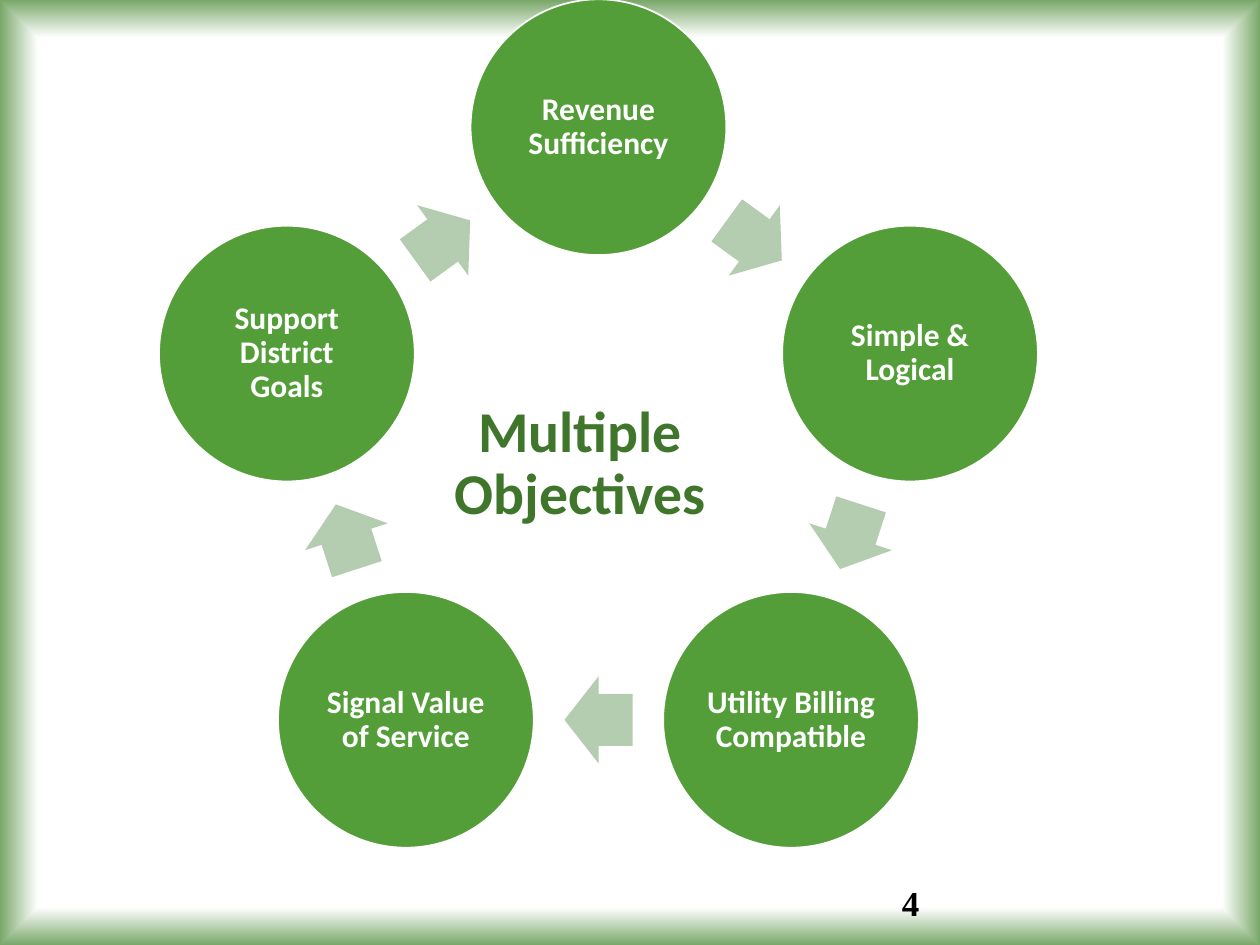
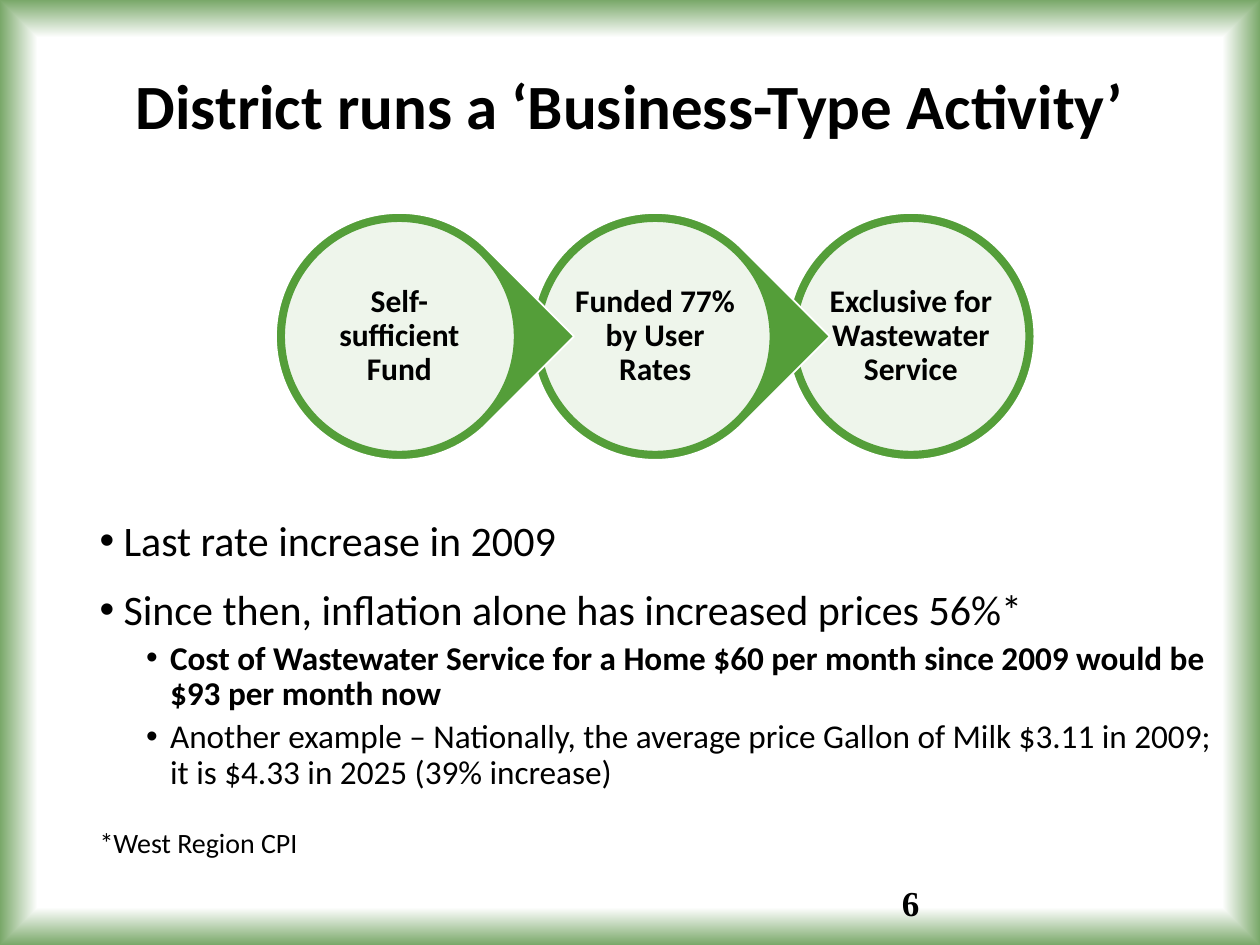
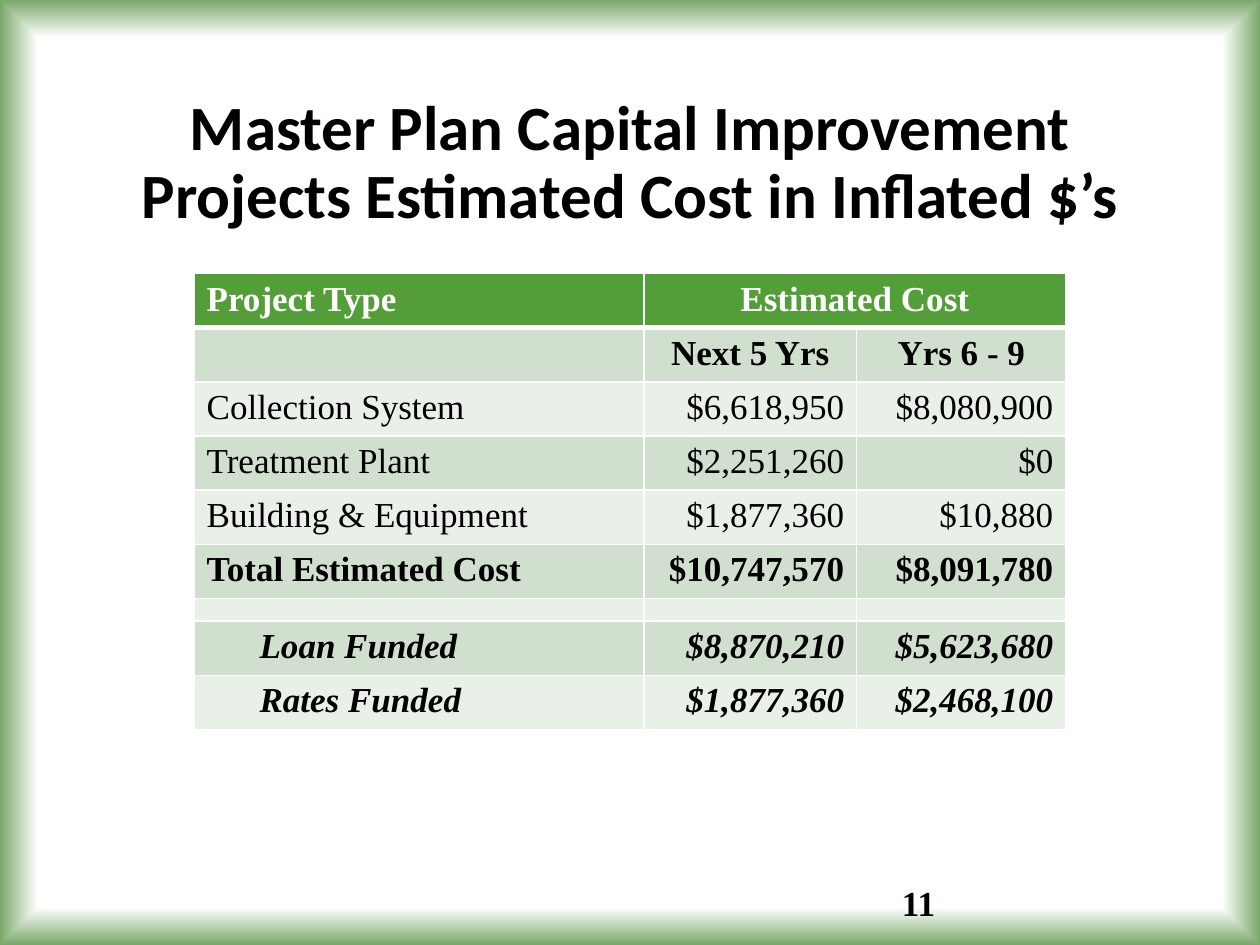
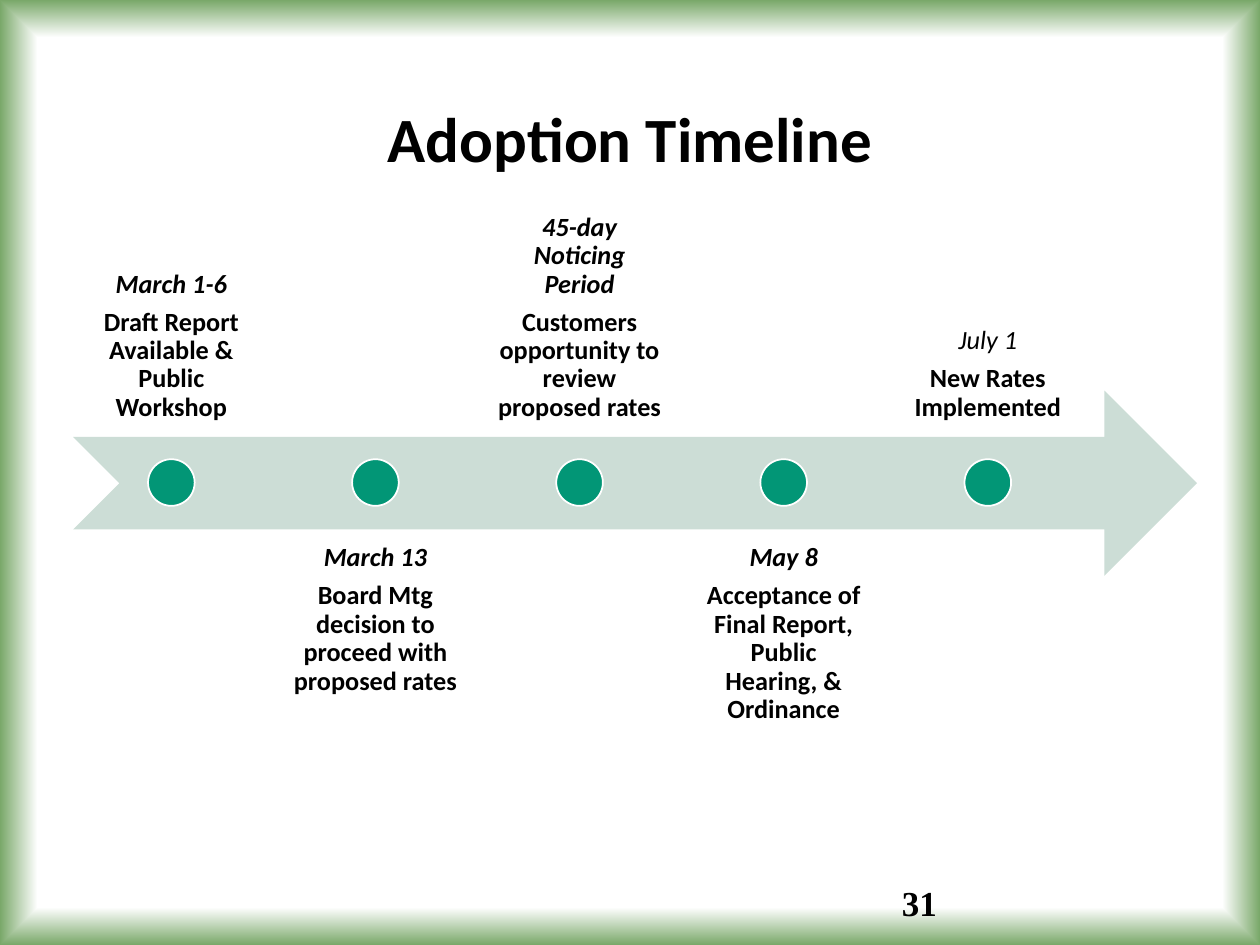
"""Build four slides on wastewater rates for a utility district."""
from dataclasses import dataclass
from math import cos, radians, sin
from typing import NamedTuple, Optional

from lxml.etree import SubElement
from pptx import Presentation
from pptx.dml.color import RGBColor
from pptx.enum.shapes import MSO_SHAPE as Preset
from pptx.enum.text import MSO_ANCHOR as Anchor, MSO_AUTO_SIZE as AutoSize, PP_ALIGN as Align
from pptx.oxml import parse_xml
from pptx.oxml.ns import nsdecls, qn
from pptx.presentation import Presentation as Deck
from pptx.shapes.autoshape import Shape
from pptx.slide import Slide
from pptx.table import _Cell as Cell
from pptx.text.text import TextFrame
from pptx.util import Inches, Pt


@dataclass(frozen=True)
class Theme:
    """Colours, fonts and type sizes of the deck."""
    green: str = "549E39"
    dark_green: str = "3F762B"
    pale_green: str = "B4CCAF"
    edge_green: str = "78A768"
    band_dark: str = "D1DFCE"
    band_light: str = "E9F0E8"
    arrow: str = "CCDDD6"
    teal: str = "029676"
    white: str = "FFFFFF"
    black: str = "000000"
    sans: str = "Calibri"
    serif: str = "Times New Roman"
    title: float = 36
    hub: float = 33
    body: float = 24
    detail: float = 19
    note: float = 16
    label: float = 18
    event: float = 15
    table: float = 20
    spacer: float = 8


THEME = Theme()
TITLE_ONLY, TITLE_AND_BODY = 5, 1


class Area(NamedTuple):
    """A rectangle in inches."""
    left: float
    top: float
    width: float
    height: float


class Event(NamedTuple):
    """A milestone on the timeline."""
    date: str
    task: str
    bold_date: bool = True


class Item(NamedTuple):
    """A paragraph of the body list."""
    text: str
    size: float
    level: int = 0
    bold: bool = False
    before: float = 0
    after: float = 0
    margin: float = 0
    bullet: bool = True


class Row(NamedTuple):
    """A row of the cost table."""
    cells: tuple[str, ...]
    bold: bool = False
    italic: bool = False
    align: Align = Align.RIGHT
    margin: float = 0
    height: float = 0.43


OBJECTIVES = ("Revenue Sufficiency", "Simple & Logical", "Utility Billing Compatible",
              "Signal Value of Service", "Support District Goals")
FUND_TRAITS = ("Self-sufficient Fund", "Funded 77% by User Rates",
               "Exclusive for Wastewater Service")
RATE_ITEMS = (
    Item("Last rate increase in 2009", THEME.body, after=6, margin=0.19),
    Item("Since then, inflation alone has increased prices 56%*", THEME.body,
         before=7.5, margin=0.19),
    Item("Cost of Wastewater Service for a Home $60 per month since 2009 would be "
         "$93 per month now", THEME.detail, level=1, bold=True, before=3.8, margin=0.56),
    Item("Another example – Nationally, the average price Gallon of Milk $3.11 in 2009; "
         "it is $4.33 in 2025 (39% increase)", THEME.detail, level=1, before=3.8,
         after=18, margin=0.56),
    Item("*West Region CPI", THEME.note, level=1, before=3.8, bullet=False),
)
COST_ROWS = (
    Row(("Project Type", "Estimated Cost", ""), bold=True, align=Align.CENTER),
    Row(("", "Next 5 Yrs", "Yrs 6 - 9"), bold=True, align=Align.CENTER),
    Row(("Collection System", "$6,618,950", "$8,080,900")),
    Row(("Treatment Plant", "$2,251,260", "$0")),
    Row(("Building & Equipment", "$1,877,360", "$10,880")),
    Row(("Total Estimated Cost", "$10,747,570", "$8,091,780"), bold=True),
    Row(("", "", ""), height=0.18),
    Row(("Loan Funded", "$8,870,210", "$5,623,680"), bold=True, italic=True, margin=0.42),
    Row(("Rates Funded", "$1,877,360", "$2,468,100"), bold=True, italic=True, margin=0.42),
)
COLUMN_WIDTHS = (3.57, 1.69, 1.66)
EVENTS = (
    Event("March 1-6", "Draft Report Available & Public Workshop"),
    Event("March 13", "Board Mtg decision to proceed with proposed rates"),
    Event("45-day Noticing Period", "Customers opportunity to review proposed rates"),
    Event("May 8", "Acceptance of Final Report, Public Hearing, & Ordinance"),
    Event("July 1", "New Rates Implemented", bold_date=False),
)


def rgb(color: str) -> RGBColor:
    """Turn a hex string into a colour."""
    return RGBColor.from_string(color)


def write(frame: TextFrame, text: str, *, size: float, font: str = THEME.sans,
          color: str = THEME.black, bold: bool = False, italic: bool = False,
          align: Align = Align.LEFT, spacing: float = 0.9, before: float = 0,
          after: float = 0, level: int = 0, margin: float = 0, hanging: float = 0,
          bullet: bool = False) -> None:
    """Write one formatted paragraph into a text frame."""
    para = frame.paragraphs[0]
    if para.runs:
        para = frame.add_paragraph()
    props = para._p.get_or_add_pPr()
    props.set("marL", str(Inches(margin)))
    props.set("indent", str(-Inches(hanging)))
    if bullet:
        SubElement(props, qn("a:buFont"), typeface="Arial")
        SubElement(props, qn("a:buChar"), char="•")
    else:
        SubElement(props, qn("a:buNone"))
    para.level = level
    para.alignment = align
    para.line_spacing = spacing
    para.space_before, para.space_after = Pt(before), Pt(after)
    for index, line in enumerate(text.split("\n")):
        if index:
            para.add_line_break()
        span = para.add_run()
        span.text = line
        span.font.name, span.font.size = font, Pt(size)
        span.font.bold, span.font.italic = bold, italic
        span.font.color.rgb = rgb(color)


def set_frame(frame: TextFrame, anchor: Anchor, inset: Optional[float] = None) -> TextFrame:
    """Wrap a text frame and fix its anchor and insets."""
    frame.word_wrap = True
    frame.auto_size = AutoSize.NONE
    frame.vertical_anchor = anchor
    if inset is not None:
        frame.margin_left = frame.margin_right = Inches(inset)
        frame.margin_top = frame.margin_bottom = Inches(inset)
    return frame


def place(shape: Shape, area: Area) -> None:
    """Move and size a shape."""
    shape.left, shape.top = Inches(area.left), Inches(area.top)
    shape.width, shape.height = Inches(area.width), Inches(area.height)


def add_box(page: Slide, area: Area, anchor: Anchor = Anchor.TOP,
            inset: Optional[float] = None) -> TextFrame:
    """Add a text box and return its frame."""
    box = page.shapes.add_textbox(*(Inches(length) for length in area))
    return set_frame(box.text_frame, anchor, inset)


def add_figure(page: Slide, preset: Preset, area: Area, fill: str,
               line: Optional[str] = None, rotation: float = 0) -> Shape:
    """Add a flat filled shape."""
    shape = page.shapes.add_shape(preset, *(Inches(length) for length in area))
    shape.shadow.inherit = False
    shape.rotation = rotation
    shape.fill.solid()
    shape.fill.fore_color.rgb = rgb(fill)
    if line:
        shape.line.color.rgb = rgb(line)
        shape.line.width = Pt(1)
    else:
        shape.line.fill.background()
    return shape


def centred(x: float, y: float, width: float, height: float) -> Area:
    """Return the area centred on a point."""
    return Area(x - width / 2, y - height / 2, width, height)


def add_page(deck: Deck, number: int, title: str, area: Area, layout: int = TITLE_ONLY,
             size: float = THEME.title, color: str = THEME.black) -> Slide:
    """Add a slide with its title and page number."""
    page = deck.slides.add_slide(deck.slide_layouts[layout])
    place(page.shapes.title, area)
    write(set_frame(page.shapes.title.text_frame, Anchor.MIDDLE), title,
          size=size, color=color, bold=True, align=Align.CENTER)
    write(add_box(page, Area(7.06, 6.95, 2.25, 0.4)), str(number),
          size=THEME.table, font=THEME.serif, bold=True, spacing=1)
    return page


def set_background(deck: Deck) -> None:
    """Give the master a white ground with a soft green edge."""
    stops = ((0, THEME.white), (92, THEME.white), (100, THEME.edge_green))
    stop_xml = "".join(f'<a:gs pos="{share * 1000}"><a:srgbClr val="{color}"/></a:gs>'
                       for share, color in stops)
    content = deck.slide_master.element.find(qn("p:cSld"))
    for ground in content.findall(qn("p:bg")):
        content.remove(ground)
    content.insert(0, parse_xml(
        f'<p:bg {nsdecls("p", "a")}><p:bgPr><a:gradFill rotWithShape="1">'
        f'<a:gsLst>{stop_xml}</a:gsLst><a:path path="shape">'
        '<a:fillToRect l="50000" t="50000" r="50000" b="50000"/></a:path>'
        '</a:gradFill><a:effectLst/></p:bgPr></p:bg>'))


def build_objectives(deck: Deck) -> None:
    """Draw the ring of objectives."""
    page = add_page(deck, 4, "Multiple\nObjectives", Area(3.25, 2.97, 2.71, 1.44),
                    size=THEME.hub, color=THEME.dark_green)
    center_x, center_y, radius, diameter = 4.75, 3.61, 2.6, 2.03
    step = 360 / len(OBJECTIVES)
    arrow_radius = radius * cos(radians(step / 2))
    for index, objective in enumerate(OBJECTIVES):
        angle = radians(index * step)
        circle = add_figure(page, Preset.OVAL, centred(
            center_x + radius * sin(angle), center_y - radius * cos(angle),
            diameter, diameter), THEME.green, THEME.white)
        write(set_frame(circle.text_frame, Anchor.MIDDLE, 0.03), objective,
              size=THEME.label, color=THEME.white, bold=True, align=Align.CENTER)
        turn = (index + 0.5) * step
        arrow = add_figure(page, Preset.RIGHT_ARROW, centred(
            center_x + arrow_radius * sin(radians(turn)),
            center_y - arrow_radius * cos(radians(turn)), 0.54, 0.69),
            THEME.pale_green, rotation=turn)
        arrow.adjustments[0], arrow.adjustments[1] = 0.6, 0.5


def build_business(deck: Deck) -> None:
    """Draw the chain of fund traits and the rate history."""
    page = add_page(deck, 6, "District runs a ‘Business-Type Activity’",
                    Area(0.69, 0.4, 8.62, 0.93), TITLE_AND_BODY)
    last = len(FUND_TRAITS) - 1
    for index, trait in reversed(list(enumerate(FUND_TRAITS))):
        x, y = 3.17 + 2.03 * index, 2.67
        preset, rotation = (Preset.OVAL, 0) if index == last else (Preset.TEAR, 45)
        add_figure(page, preset, centred(x, y, 1.96, 1.96), THEME.green, THEME.white, rotation)
        disc = add_figure(page, Preset.OVAL, centred(x, y, 1.83, 1.83),
                          THEME.white, THEME.green)
        tint = disc.fill._xPr.find(qn("a:solidFill"))[0]
        SubElement(tint, qn("a:alpha"), val="90000")
        write(set_frame(disc.text_frame, Anchor.MIDDLE, 0), trait,
              size=THEME.label, bold=True, align=Align.CENTER)
    body = page.placeholders[1]
    place(body, Area(0.69, 4.08, 9.06, 2.87))
    frame = set_frame(body.text_frame, Anchor.TOP)
    for item in RATE_ITEMS:
        write(frame, item.text, size=item.size, bold=item.bold, before=item.before,
              after=item.after, level=item.level, margin=item.margin,
              hanging=0.19 if item.bullet else 0, bullet=item.bullet)


def set_cell(cell: Cell, fill: str, bottom: float) -> None:
    """Fill a cell and draw its white borders."""
    cell.fill.solid()
    cell.fill.fore_color.rgb = rgb(fill)
    widths = {"lnL": 1, "lnR": 1, "lnT": 1, "lnB": bottom}
    for index, (side, width) in enumerate(widths.items()):
        cell._tc.get_or_add_tcPr().insert(index, parse_xml(
            f'<a:{side} {nsdecls("a")} w="{Pt(width)}"><a:solidFill>'
            f'<a:srgbClr val="{THEME.white}"/></a:solidFill></a:{side}>'))


def build_costs(deck: Deck) -> None:
    """Draw the table of project costs."""
    page = add_page(deck, 11, "Master Plan Capital Improvement Projects Estimated Cost "
                    "in Inflated $’s", Area(0.69, 0.67, 8.62, 1.27))
    area = Area(1.54, 2.17, sum(COLUMN_WIDTHS), sum(row.height for row in COST_ROWS))
    table = page.shapes.add_table(len(COST_ROWS), len(COLUMN_WIDTHS),
                                  *(Inches(length) for length in area)).table
    for column, width in zip(table.columns, COLUMN_WIDTHS):
        column.width = Inches(width)
    for row_index, row in enumerate(COST_ROWS):
        table.rows[row_index].height = Inches(row.height)
        header = row_index == 0
        band = THEME.band_dark if row_index % 2 else THEME.band_light
        for column_index, text in enumerate(row.cells):
            cell = table.cell(row_index, column_index)
            set_cell(cell, THEME.green if header else band, 3 if header else 1)
            first = column_index == 0
            if text:
                write(cell.text_frame, text, size=THEME.table, font=THEME.serif,
                      color=THEME.white if header else THEME.black, bold=row.bold,
                      italic=row.italic, align=Align.LEFT if first else row.align,
                      spacing=1, margin=row.margin if first else 0)
            else:
                cell.margin_top = cell.margin_bottom = 0
                SubElement(cell.text_frame.paragraphs[0]._p, qn("a:endParaRPr"),
                           sz=str(int(THEME.spacer * 100)))
    table.cell(0, 1).merge(table.cell(0, 2))


def build_timeline(deck: Deck) -> None:
    """Draw the adoption timeline."""
    page = add_page(deck, 31, "Adoption Timeline", Area(0.69, 0.4, 8.62, 1.45))
    add_figure(page, Preset.NOTCHED_RIGHT_ARROW, Area(0.58, 3.1, 8.92, 1.47), THEME.arrow)
    for index, event in enumerate(EVENTS):
        x = 1.36 + 1.62 * index
        top, anchor = (4.2, Anchor.TOP) if index % 2 else (2, Anchor.BOTTOM)
        frame = add_box(page, Area(x - 0.77, top, 1.54, 1.47), anchor, 0.12)
        write(frame, event.date, size=THEME.event, bold=event.bold_date, italic=True,
              align=Align.CENTER, after=5.5)
        write(frame, event.task, size=THEME.event, bold=True, align=Align.CENTER)
        add_figure(page, Preset.OVAL, centred(x, 3.83, 0.37, 0.37), THEME.teal, THEME.white)


def main() -> None:
    """Build and save the deck."""
    deck = Presentation()
    deck.slide_width, deck.slide_height = Inches(10), Inches(7.5)
    set_background(deck)
    build_objectives(deck)
    build_business(deck)
    build_costs(deck)
    build_timeline(deck)
    deck.save("out.pptx")


if __name__ == "__main__":
    main()
